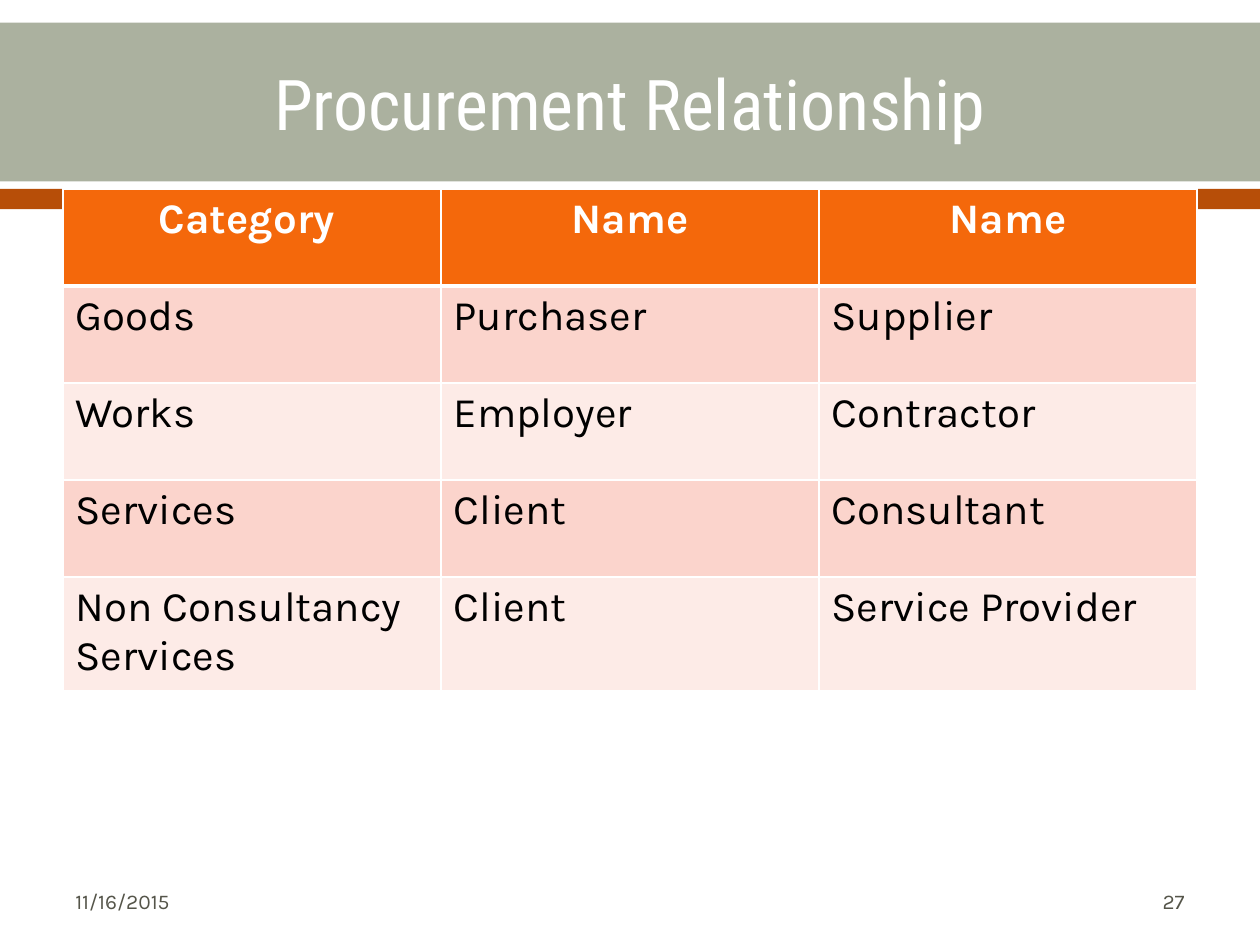
from dataclasses import dataclass

import pptx
import pptx.dml.color
import pptx.enum.shapes
import pptx.enum.text
import pptx.oxml
import pptx.oxml.ns
import pptx.util

WIDTH, HEIGHT = 10, 7.5
MARGIN = WIDTH / 20
CONTENT_WIDTH = WIDTH - 2 * MARGIN
ROW_HEIGHT = 0.77

COLORS = {
    "sage": "ABB19F",
    "rust": "B74E08",
    "header": "F4680B",
    "odd_row": "FBD4CC",
    "even_row": "FDEBE7",
    "white": "FFFFFF",
    "black": "000000",
    "footer": "55554A",
}

ALIGN = pptx.enum.text.PP_ALIGN
ROWS = [
    ["Category ", "Name", "Name"],
    ["Goods", "Purchaser", "Supplier"],
    ["Works", "Employer", "Contractor"],
    ["Services", "Client", "Consultant"],
    ["Non Consultancy Services", "Client", "Service Provider"],
]


@dataclass
class Box:
    left: float
    top: float
    width: float
    height: float

    def lengths(self) -> list:
        return [pptx.util.Inches(value) for value in
                (self.left, self.top, self.width, self.height)]


@dataclass
class Style:
    size: int
    color: str
    font: str = "Karla"
    align: ALIGN = ALIGN.LEFT
    bold: bool = False


@dataclass
class Label:
    text: str
    box: Box
    style: Style


def rgb(name: str) -> pptx.dml.color.RGBColor:
    return pptx.dml.color.RGBColor.from_string(COLORS[name])


def add_text(frame, text: str, style: Style) -> None:
    paragraph = frame.paragraphs[0]
    paragraph.alignment = style.align
    run = paragraph.add_run()
    run.text = text
    run.font.name = style.font
    run.font.size = pptx.util.Pt(style.size)
    run.font.bold = style.bold
    run.font.color.rgb = rgb(style.color)


def add_band(slide, box: Box, color: str) -> None:
    shape = slide.shapes.add_shape(
        pptx.enum.shapes.MSO_SHAPE.RECTANGLE, *box.lengths())
    shape.shadow.inherit = False
    shape.fill.solid()
    shape.fill.fore_color.rgb = rgb(color)
    shape.line.fill.background()


def add_label(slide, label: Label) -> None:
    frame = slide.shapes.add_textbox(*label.box.lengths()).text_frame
    frame.word_wrap = True
    frame.vertical_anchor = pptx.enum.text.MSO_ANCHOR.MIDDLE
    add_text(frame, label.text, label.style)


def set_borders(cell, bottom: int) -> None:
    properties = cell._tc.get_or_add_tcPr()
    widths = {"lnL": 1, "lnR": 1, "lnT": 1, "lnB": bottom}
    for index, (side, points) in enumerate(widths.items()):
        # Border lines come before the fill in the cell properties
        properties.insert(index, pptx.oxml.parse_xml(
            f'<a:{side} {pptx.oxml.ns.nsdecls("a")} w="{pptx.util.Pt(points)}">'
            f'<a:solidFill><a:srgbClr val="{COLORS["white"]}"/></a:solidFill>'
            f'</a:{side}>'))


def add_relationship_table(slide, rows: list[list[str]], box: Box) -> None:
    table = slide.shapes.add_table(
        len(rows), len(rows[0]), *box.lengths()).table
    header_style = Style(24, "white", align=ALIGN.CENTER, bold=True)
    body_style = Style(24, "black")
    for row_index, texts in enumerate(rows):
        is_header = row_index == 0
        band = "odd_row" if row_index % 2 else "even_row"
        for column_index, text in enumerate(texts):
            cell = table.cell(row_index, column_index)
            cell.fill.solid()
            cell.fill.fore_color.rgb = rgb("header" if is_header else band)
            set_borders(cell, bottom=3 if is_header else 1)
            add_text(cell.text_frame, text,
                     header_style if is_header else body_style)


def main() -> None:
    presentation = pptx.Presentation()
    presentation.slide_width = pptx.util.Inches(WIDTH)
    presentation.slide_height = pptx.util.Inches(HEIGHT)
    slide = presentation.slides.add_slide(presentation.slide_layouts[6])

    # Title bands
    add_band(slide, Box(0, 0.18, WIDTH, 1.26), "sage")
    add_band(slide, Box(0, 1.5, WIDTH, 0.16), "rust")

    # Title and footer
    footer_width = 2.33
    footer_top = 6.95
    labels = [
        Label("Procurement Relationship",
              Box(MARGIN, 0.2, CONTENT_WIDTH, 1.22),
              Style(40, "white", "Roboto Condensed", ALIGN.CENTER)),
        Label("11/16/2015",
              Box(MARGIN, footer_top, footer_width, 0.4),
              Style(12, "footer")),
        Label("27",
              Box(WIDTH - MARGIN - footer_width, footer_top, footer_width, 0.4),
              Style(12, "footer", align=ALIGN.RIGHT)),
    ]
    for label in labels:
        add_label(slide, label)

    # Table of parties by category
    add_relationship_table(
        slide, ROWS, Box(MARGIN, 1.5, CONTENT_WIDTH, ROW_HEIGHT * len(ROWS)))

    presentation.save("out.pptx")


if __name__ == "__main__":
    main()
